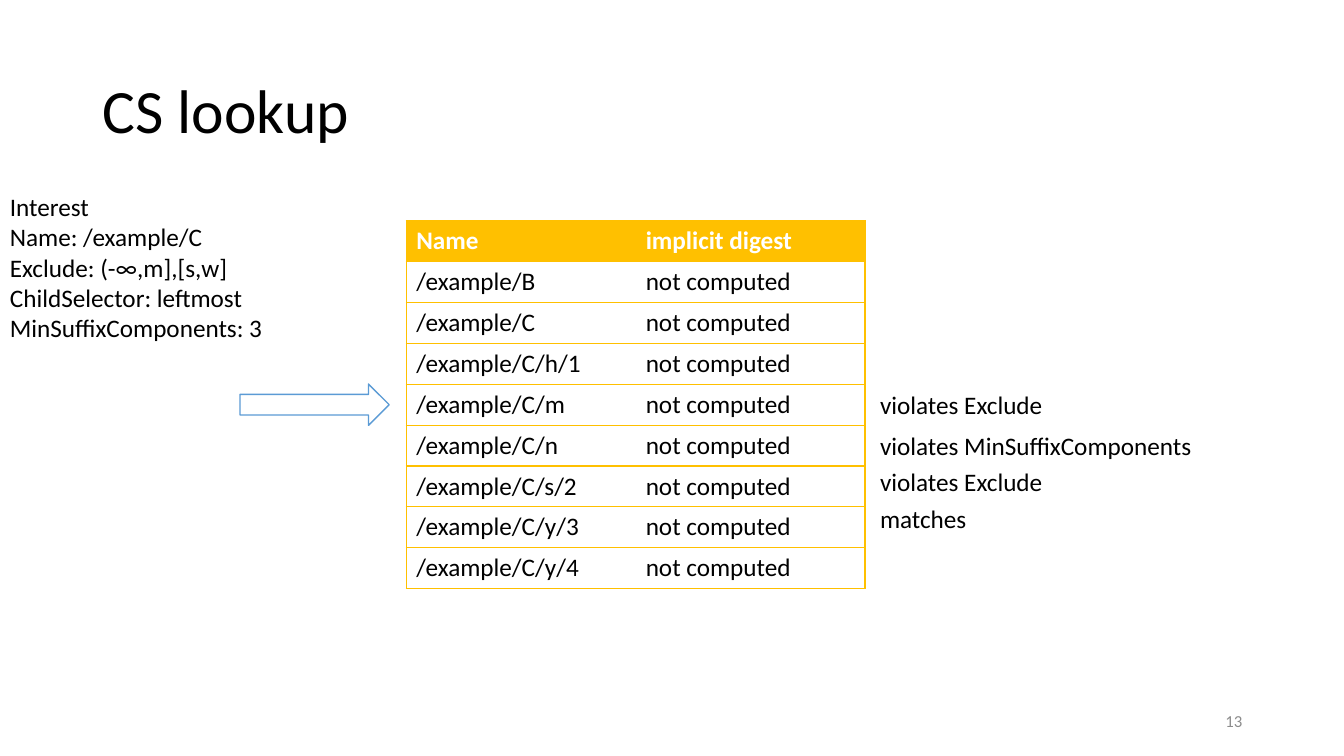
from dataclasses import dataclass

from lxml import etree
from pptx import Presentation
from pptx import util as u
from pptx.dml.color import RGBColor
from pptx.enum import shapes, text
from pptx.oxml.ns import qn

PX = 9144  # EMU per px, 100 px to the inch


@dataclass(frozen=True)
class Theme:
    font: str = "Calibri"
    ink: str = "000000"
    paper: str = "FFFFFF"
    gold: str = "FFC000"
    blue: str = "5B9BD5"
    grey: str = "8C8C8C"
    title_size: int = 44
    body_size: int = 18
    number_size: int = 12


class Deck:
    """Holds the theme and the current slide."""

    def __init__(self, theme, width, height):
        self.theme = theme
        self.prs = Presentation()
        self.prs.slide_width, self.prs.slide_height = self.px(width, height)
        self.slide = self.prs.slides.add_slide(self.prs.slide_layouts[5])

    @staticmethod
    def px(*lengths):
        return [u.Emu(length * PX) for length in lengths]

    def style(self, paragraph, size, color, bold=False):
        font = paragraph.font
        font.name, font.size, font.bold = self.theme.font, u.Pt(size), bold
        font.color.rgb = RGBColor.from_string(color)

    def title(self, words, box):
        title = self.slide.shapes.title
        title.left, title.top, title.width, title.height = self.px(*box)
        frame = title.text_frame
        frame.text = words
        frame.auto_size = text.MSO_AUTO_SIZE.NONE
        frame.vertical_anchor = text.MSO_ANCHOR.MIDDLE
        heading = frame.paragraphs[0]
        heading.alignment = text.PP_ALIGN.LEFT
        heading.line_spacing = 0.9
        self.style(heading, self.theme.title_size, self.theme.ink)

    def label(self, lines, box):
        frame = self.slide.shapes.add_textbox(*self.px(*box)).text_frame
        frame.word_wrap = False
        frame.auto_size = text.MSO_AUTO_SIZE.SHAPE_TO_FIT_TEXT
        frame.text = "\n".join(lines)
        for line in frame.paragraphs:
            self.style(line, self.theme.body_size, self.theme.ink)

    def page_number(self, number, box):
        frame = self.slide.shapes.add_textbox(*self.px(*box)).text_frame
        frame.word_wrap = True
        frame.vertical_anchor = text.MSO_ANCHOR.MIDDLE
        frame.text = str(number)
        frame.paragraphs[0].alignment = text.PP_ALIGN.RIGHT
        self.style(frame.paragraphs[0], self.theme.number_size, self.theme.grey)

    def arrow(self, box):
        arrow = self.slide.shapes.add_shape(
            shapes.MSO_SHAPE.RIGHT_ARROW, *self.px(*box))
        arrow.shadow.inherit = False
        arrow.fill.solid()
        arrow.fill.fore_color.rgb = RGBColor.from_string(self.theme.paper)
        arrow.line.color.rgb = RGBColor.from_string(self.theme.blue)
        arrow.line.width = u.Pt(1)

    def borders(self, cell, hidden):
        """Draw gold lines on every side of the cell but the hidden one."""
        properties = cell._tc.get_or_add_tcPr()
        for side in ("lnL", "lnR", "lnT", "lnB"):
            line = etree.SubElement(properties, qn(f"a:{side}"), w=str(u.Pt(1)))
            if side == hidden:
                etree.SubElement(line, qn("a:noFill"))
            else:
                fill = etree.SubElement(line, qn("a:solidFill"))
                etree.SubElement(fill, qn("a:srgbClr"), val=self.theme.gold)

    def table(self, rows, box):
        theme = self.theme
        table = self.slide.shapes.add_table(
            len(rows), len(rows[0]), *self.px(*box)).table
        for r, row in enumerate(rows):
            header = r == 0
            for c, words in enumerate(row):
                cell = table.cell(r, c)
                cell.text = words
                self.style(cell.text_frame.paragraphs[0], theme.body_size,
                           theme.paper if header else theme.ink, header)
                self.borders(cell, "lnR" if c == 0 else "lnL")
                cell.fill.solid()
                cell.fill.fore_color.rgb = RGBColor.from_string(
                    theme.gold if header else theme.paper)


def main():
    deck = Deck(Theme(), 1333, 750)
    deck.title("CS lookup", (92, 40, 1150, 145))

    # Incoming Interest
    deck.label(["Interest", "Name: /example/C", "Exclude: (-∞,m],[s,w]",
                "ChildSelector: leftmost", "MinSuffixComponents: 3"],
               (0, 185, 274, 162))

    # Content store
    entries = ["B", "C", "C/h/1", "C/m", "C/n", "C/s/2", "C/y/3", "C/y/4"]
    deck.table([("Name", "implicit digest")]
               + [(f"/example/{entry}", "not computed") for entry in entries],
               (403, 219, 455, 365))

    # Start of the lookup
    deck.arrow((238, 381, 148, 41))

    # Verdict on each visited entry
    for verdict, top, width in [("violates Exclude", 381, 183),
                                ("violates MinSuffixComponents", 422, 333),
                                ("violates Exclude", 458, 183),
                                ("matches", 494, 107)]:
        deck.label([verdict], (863, top, width, 40))

    deck.page_number(13, (942, 695, 300, 40))
    deck.prs.save("out.pptx")


if __name__ == "__main__":
    main()
